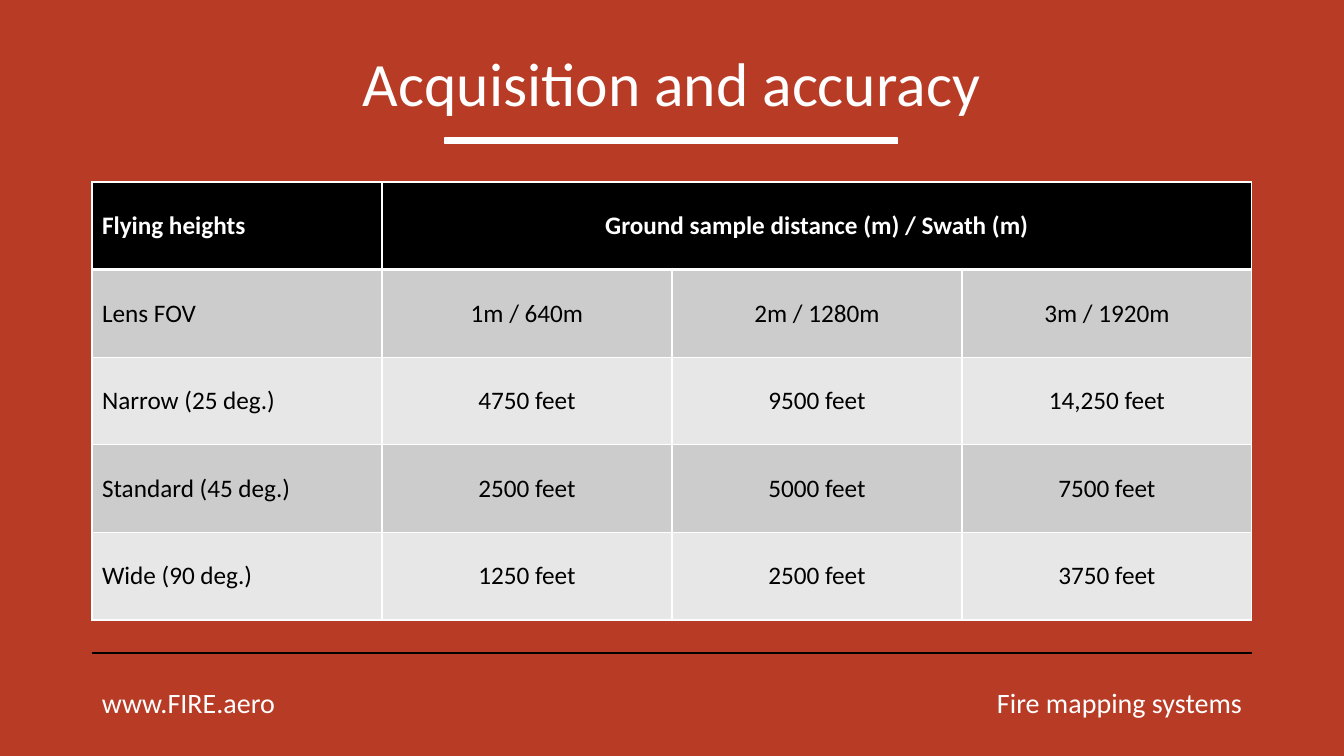
from lxml import etree
from pptx import Presentation, util as u
from pptx.dml.color import RGBColor
from pptx.enum import shapes, text
from pptx.oxml.ns import qn

PX = 12192000 / 1344  # EMU in one px
RED = RGBColor(0xB8, 0x3B, 0x26)
WHITE = RGBColor(0xFF, 0xFF, 0xFF)
BLACK = RGBColor(0x00, 0x00, 0x00)
DARK_BAND = RGBColor(0xCC, 0xCC, 0xCC)
LIGHT_BAND = RGBColor(0xE7, 0xE7, 0xE7)
FONT = "Calibri"
LEFT, CENTER, RIGHT = text.PP_ALIGN.LEFT, text.PP_ALIGN.CENTER, text.PP_ALIGN.RIGHT

HEADER = ["Flying heights", "Ground sample distance (m) / Swath (m)"]
ROWS = [
    ["Lens FOV", "1m / 640m", "2m / 1280m", "3m / 1920m"],
    ["Narrow (25 deg.)", "4750 feet", "9500 feet", "14,250 feet"],
    ["Standard (45 deg.)", "2500 feet", "5000 feet", "7500 feet"],
    ["Wide (90 deg.)", "1250 feet", "2500 feet", "3750 feet"],
]


def px(*lengths):
    return [u.Emu(round(length * PX)) for length in lengths]


def write(paragraph, words, size, color, align=LEFT, bold=False):
    paragraph.alignment = align
    run = paragraph.add_run()
    run.text = words
    run.font.name = FONT
    run.font.size = u.Pt(size)
    run.font.bold = bold
    run.font.color.rgb = color


def add_text(slide, box, words, size, align, anchor=text.MSO_ANCHOR.TOP):
    frame = slide.shapes.add_textbox(*px(*box)).text_frame
    frame.word_wrap = True
    frame.vertical_anchor = anchor
    write(frame.paragraphs[0], words, size, WHITE, align)
    return frame.paragraphs[0]


def add_title(slide, left, top, width, height):
    # Underline bar, centred below the words
    bar_width = 453
    bar_left = left + (width - bar_width) // 2
    bar = slide.shapes.add_shape(shapes.MSO_SHAPE.RECTANGLE,
                                 *px(bar_left, top + 124, bar_width, 6))
    bar.shadow.inherit = False
    bar.fill.solid()
    bar.fill.fore_color.rgb = WHITE
    bar.line.color.rgb = WHITE
    bar.line.width = u.Pt(0.75)
    # Heading
    heading = add_text(slide, (left, top, width, height), "Acquisition and accuracy",
                       44, CENTER, text.MSO_ANCHOR.MIDDLE)
    heading.line_spacing = 0.9


def add_footer(slide, left, top, width, height):
    # Rule across the top
    rule = slide.shapes.add_connector(shapes.MSO_CONNECTOR.STRAIGHT,
                                      *px(left, top, left + width, top))
    rule.line.color.rgb = BLACK
    rule.line.width = u.Pt(1)
    etree.SubElement(rule._element.spPr, qn("a:effectLst"))
    # Address and name
    text_width, text_height = 475, 44
    text_top = top + height - text_height
    add_text(slide, (left, text_top, text_width, text_height), "www.FIRE.aero", 20, LEFT)
    add_text(slide, (left + width - text_width, text_top, text_width, text_height),
             "Fire mapping systems", 20, RIGHT)


def set_borders(cell, top, bottom):
    properties = cell._tc.get_or_add_tcPr()
    for side, width in (("L", 1), ("R", 1), ("T", top), ("B", bottom)):
        line = etree.SubElement(properties, qn(f"a:ln{side}"), w=str(u.Pt(width)))
        fill = etree.SubElement(line, qn("a:solidFill"))
        etree.SubElement(fill, qn("a:srgbClr"), val=str(WHITE))


def add_height_table(slide, left, top, width, height):
    row_count, column_count = len(ROWS) + 1, len(ROWS[0])
    table = slide.shapes.add_table(row_count, column_count,
                                   *px(left, top, width, height)).table
    for column in table.columns:
        column.width = px(width / column_count)[0]
    for row in table.rows:
        row.height = px(height / row_count)[0]
    # Borders and banded fills, with a thick line under the header
    for r, row in enumerate(table.rows):
        for cell in row.cells:
            set_borders(cell, 3 if r == 1 else 1, 3 if r == 0 else 1)
            cell.fill.solid()
            band = DARK_BAND if r % 2 else LIGHT_BAND
            cell.fill.fore_color.rgb = band if r else BLACK
            cell.vertical_anchor = text.MSO_ANCHOR.MIDDLE
    table.cell(0, 1).merge(table.cell(0, column_count - 1))
    # Words
    for r, values in enumerate([HEADER] + ROWS):
        for c, value in enumerate(values):
            write(table.cell(r, c).text_frame.paragraphs[0], value, 18,
                  BLACK if r else WHITE, CENTER if c else LEFT, bold=r == 0)


def main():
    presentation = Presentation()
    presentation.slide_width, presentation.slide_height = px(1344, 756)
    slide = presentation.slides.add_slide(presentation.slide_layouts[6])
    slide.background.fill.solid()
    slide.background.fill.fore_color.rgb = RED
    add_title(slide, 92, 14, 1160, 146)
    add_height_table(slide, 92, 182, 1160, 438)
    add_footer(slide, 92, 653, 1160, 72)
    presentation.save("out.pptx")


if __name__ == "__main__":
    main()
